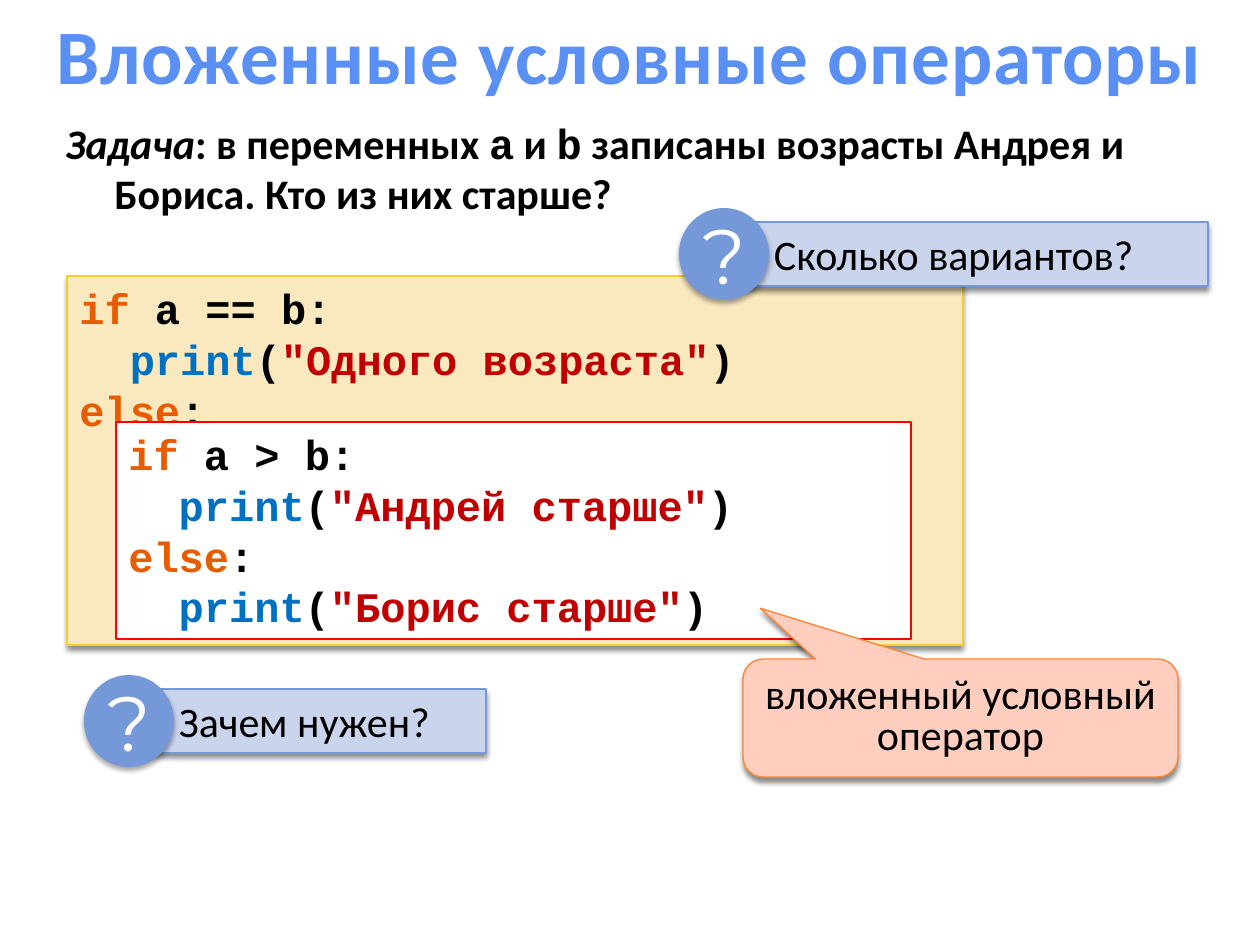
from lxml import etree
from pptx import Presentation, util as u
from pptx.dml.color import RGBColor
from pptx.enum import shapes, text
from pptx.oxml import ns

SCALE = 914400 / 126
KIND = shapes.MSO_SHAPE
BLACK, WHITE, BLUE = "000000", "FFFFFF", "7598D9"
KEY, CALL, QUOTE = "E75C01", "0070C0", "C00000"
SANS, MONO = "Calibri", "Courier New"


def px(n):
    return round(n * SCALE)


def rgb(code):
    return RGBColor.from_string(code)


def shade(shape, alpha, dist):
    """Add a soft black shadow that falls straight down."""
    props = shape._element.spPr
    for old in props.findall(ns.qn("a:effectLst")):
        props.remove(old)
    fx = etree.SubElement(props, ns.qn("a:effectLst"))
    shadow = etree.SubElement(fx, ns.qn("a:outerShdw"), blurRad=str(u.Pt(3)),
                              dist=str(u.Pt(dist)), dir="5400000", rotWithShape="0")
    tone = etree.SubElement(shadow, ns.qn("a:srgbClr"), val=BLACK)
    etree.SubElement(tone, ns.qn("a:alpha"), val=str(alpha * 1000))


def frame(shape, anchor=text.MSO_ANCHOR.TOP, wrap=True):
    body = shape.text_frame
    body.auto_size = text.MSO_AUTO_SIZE.NONE
    body.word_wrap = wrap
    body.vertical_anchor = anchor
    return body


def add_run(para, words, color=BLACK, font=SANS, size=24, bold=False, italic=False):
    run = para.add_run()
    run.text = words
    run.font.name, run.font.size = font, u.Pt(size)
    run.font.bold, run.font.italic = bold, italic
    run.font.color.rgb = rgb(color)
    return run


def add_box(parent, kind, box, fill, line=None, width=0.79):
    shape = parent.add_shape(kind, *map(px, box))
    shape.shadow.inherit = False
    shape.fill.solid()
    shape.fill.fore_color.rgb = rgb(fill)
    if line:
        shape.line.color.rgb = rgb(line)
        shape.line.width = u.Pt(width)
    else:
        shape.line.fill.background()
    return shape


def add_title(slide, words):
    title = slide.shapes.title
    title.left, title.top, title.width, title.height = map(px, (0, 0, 1260, 107))
    para = frame(title, text.MSO_ANCHOR.MIDDLE).paragraphs[0]
    para.alignment = text.PP_ALIGN.CENTER
    run = add_run(para, words, "5A90F4", size=44, bold=True)
    run.font._element.set("spc", "50")


def add_task(slide, box, runs):
    para = frame(slide.shapes.add_textbox(*map(px, box))).paragraphs[0]
    props = para._p.get_or_add_pPr()
    props.set("marL", str(px(49)))
    props.set("indent", str(px(-49)))
    for words, font, italic in runs:
        add_run(para, words, font=font, bold=True, italic=italic)


def add_code(slide, box, lines, fill, line, width):
    shape = add_box(slide.shapes, KIND.RECTANGLE, box, fill, line, width)
    body = frame(shape)
    for i, parts in enumerate(lines):
        para = body.add_paragraph() if i else body.paragraphs[0]
        para.alignment = text.PP_ALIGN.LEFT
        para.line_spacing = u.Pt(29)
        for words, color in parts:
            add_run(para, words, color, MONO, bold=True)
    return shape


def branch(test, yes):
    """Code lines from an if up to its else."""
    return [[("if", KEY), (f" {test}:", BLACK)], show(yes),
            [("else", KEY), (":", BLACK)]]


def show(words):
    return [("  ", BLACK), ("print", CALL), ("(", BLACK),
            (f'"{words}"', QUOTE), (")", BLACK)]


def add_query(slide, x, y, width, words):
    """A label with a question mark in a disc at its left end."""
    group = slide.shapes.add_group_shape().shapes
    label = add_box(group, KIND.RECTANGLE, (x + 64, y + 14, width, 64), "CAD4ED", BLUE)
    shade(label, 45, 2.4)
    body = frame(label, text.MSO_ANCHOR.MIDDLE)
    body.margin_left = px(31)
    para = body.paragraphs[0]
    para.alignment = text.PP_ALIGN.LEFT
    add_run(para, words)

    disc = add_box(group, KIND.OVAL, (x, y, 90, 92), BLUE)
    shade(disc, 35, 2)
    para = frame(disc, text.MSO_ANCHOR.MIDDLE, False).paragraphs[0]
    para.alignment = text.PP_ALIGN.CENTER
    add_run(para, "?", WHITE, "Montserrat", 44)


def add_note(slide, box, words):
    note = add_box(slide.shapes, KIND.ROUNDED_RECTANGULAR_CALLOUT, box,
                   "FFCEBF", "FE8637")
    for i, value in enumerate((-0.46, -0.93, 0.17)):
        note.adjustments[i] = value
    shade(note, 45, 2.4)
    para = frame(note, text.MSO_ANCHOR.MIDDLE).paragraphs[0]
    para.alignment = text.PP_ALIGN.CENTER
    para.line_spacing = 0.8
    add_run(para, words)


def main():
    deck = Presentation()
    deck.slide_width, deck.slide_height = px(1260), px(945)
    slide = deck.slides.add_slide(deck.slide_layouts[5])

    # Title and task
    add_title(slide, "Вложенные условные операторы")
    add_task(slide, (53, 111, 1166, 115), [
        ("Задача", SANS, True), (": в переменных ", SANS, False),
        ("a", MONO, False), (" и ", SANS, False), ("b", MONO, False),
        (" записаны возрасты Андрея и Бориса. Кто из них старше?", SANS, False)])

    # Outer and nested code
    outer = add_code(slide, (67, 276, 896, 369), branch("a == b", "Одного возраста"),
                     "FAE8BE", "F5CD2D", 0.79)
    shade(outer, 45, 2.4)
    add_code(slide, (116, 422, 795, 217),
             branch("a > b", "Андрей старше") + [show("Борис старше")],
             WHITE, "FF0000", 0.75)

    # Callout and questions
    add_note(slide, (743, 659, 435, 118), "вложенный условный оператор")
    add_query(slide, 84, 675, 338, "Зачем нужен?")
    add_query(slide, 679, 208, 465, "Сколько вариантов?")

    deck.save("out.pptx")


if __name__ == "__main__":
    main()
